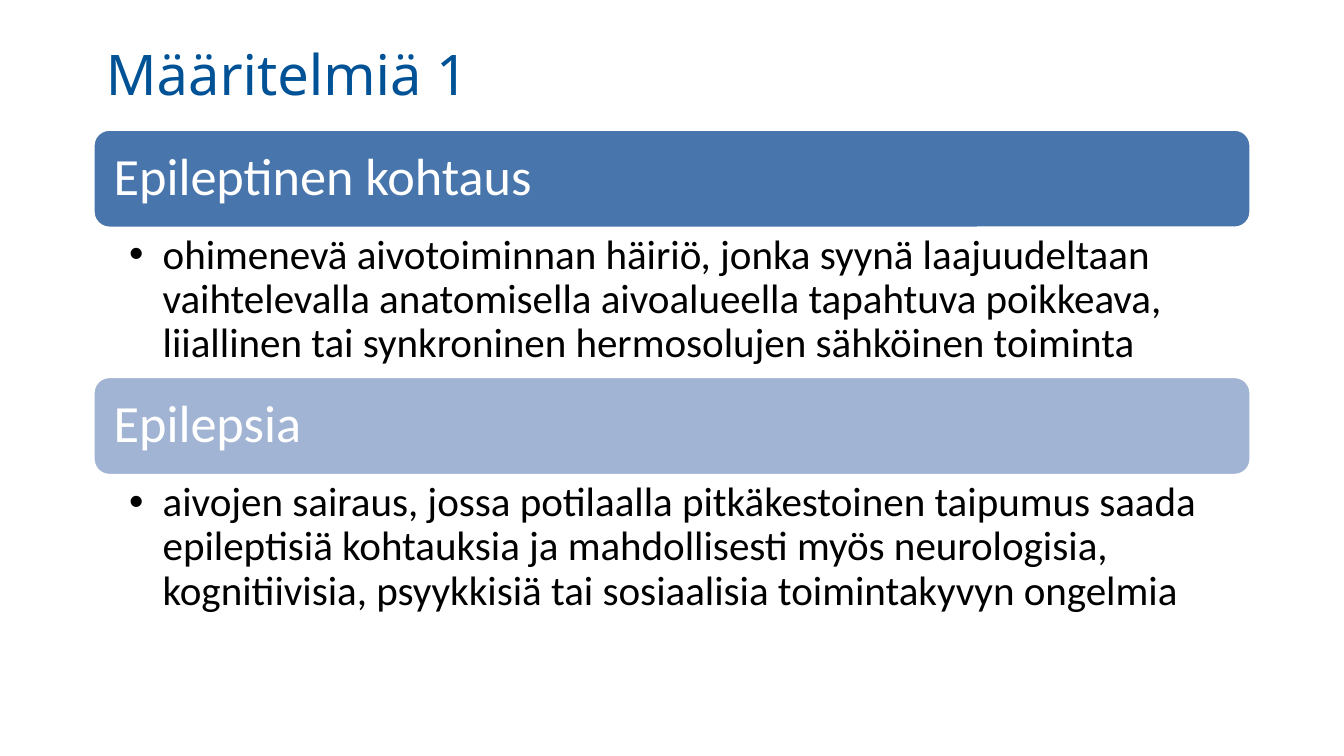
from lxml.etree import SubElement
from pptx import Presentation
from pptx.dml.color import RGBColor
from pptx.enum.shapes import MSO_SHAPE
from pptx.enum.text import MSO_ANCHOR, PP_ALIGN
from pptx.oxml.ns import qn
from pptx.util import Inches, Pt

LEFT, WIDTH = 0.69, 8.62
FIRST_TOP, SECTION_STEP = 0.96, 1.84
HEADING_HEIGHT, BODY_HEIGHT = 0.74, 1.11

SECTIONS = [
    ("Epileptinen kohtaus", "4875AC",
     "ohimenevä aivotoiminnan häiriö, jonka syynä laajuudeltaan "
     "vaihtelevalla anatomisella aivoalueella tapahtuva poikkeava, "
     "liiallinen tai synkroninen hermosolujen sähköinen toiminta"),
    ("Epilepsia", "A2B4D4",
     "aivojen sairaus, jossa potilaalla pitkäkestoinen taipumus saada "
     "epileptisiä kohtauksia ja mahdollisesti myös neurologisia, "
     "kognitiivisia, psyykkisiä tai sosiaalisia toimintakyvyn ongelmia"),
]


def color(value):
    """Turn a hex string into a colour."""
    return RGBColor.from_string(value)


def set_text(box, text, font, size, hex_color, anchor, margins):
    """Fill a box with one formatted paragraph and return the paragraph."""
    frame = box.text_frame
    frame.text = text
    frame.word_wrap = True
    frame.vertical_anchor = anchor
    left, top, right, bottom = (Inches(margin) for margin in margins)
    frame.margin_left, frame.margin_top = left, top
    frame.margin_right, frame.margin_bottom = right, bottom
    paragraph = frame.paragraphs[0]
    paragraph.alignment = PP_ALIGN.LEFT
    span = paragraph.runs[0]
    span.font.name = font
    span.font.size = Pt(size)
    span.font.color.rgb = color(hex_color)
    return paragraph


def add_bullet(paragraph):
    """Give a paragraph a round bullet with a hanging indent."""
    properties = paragraph._p.get_or_add_pPr()
    properties.set("marL", str(Inches(0.25)))
    properties.set("indent", str(-Inches(0.25)))
    SubElement(properties, qn("a:buFont"), typeface="Arial")
    SubElement(properties, qn("a:buChar"), char="•")


def add_title(page, text):
    """Add the slide title."""
    box = page.shapes.add_textbox(
        Inches(LEFT), Inches(0.24), Inches(WIDTH), Inches(0.61))
    set_text(box, text, "Noto Sans", 30, "005296",
             MSO_ANCHOR.MIDDLE, (0.1, 0.05, 0.1, 0.05))


def add_heading(page, top, text, fill):
    """Add a rounded heading bar."""
    bar = page.shapes.add_shape(
        MSO_SHAPE.ROUNDED_RECTANGLE, Inches(LEFT), Inches(top),
        Inches(WIDTH), Inches(HEADING_HEIGHT))
    bar.shadow.inherit = False
    bar.fill.solid()
    bar.fill.fore_color.rgb = color(fill)
    bar.line.color.rgb = color("FFFFFF")
    bar.line.width = Pt(2)
    paragraph = set_text(bar, text, "Calibri", 28, "FFFFFF",
                         MSO_ANCHOR.MIDDLE, (0.12, 0.12, 0.12, 0.12))
    paragraph.line_spacing = 0.9


def add_definition(page, top, text):
    """Add a bulleted definition."""
    box = page.shapes.add_textbox(
        Inches(LEFT), Inches(top), Inches(WIDTH), Inches(BODY_HEIGHT))
    paragraph = set_text(box, text, "Calibri", 22, "000000",
                         MSO_ANCHOR.TOP, (0.27, 0.04, 0.22, 0.04))
    paragraph.line_spacing = 0.9
    add_bullet(paragraph)


def main():
    """Build the slide and save it."""
    deck = Presentation()
    deck.slide_width = Inches(10)
    deck.slide_height = deck.slide_width * 9 // 16
    page = deck.slides.add_slide(deck.slide_layouts[6])
    add_title(page, "Määritelmiä 1")
    for index, (heading, fill, definition) in enumerate(SECTIONS):
        top = FIRST_TOP + index * SECTION_STEP
        add_heading(page, top, heading, fill)
        add_definition(page, top + HEADING_HEIGHT, definition)
    deck.save("out.pptx")


if __name__ == "__main__":
    main()
